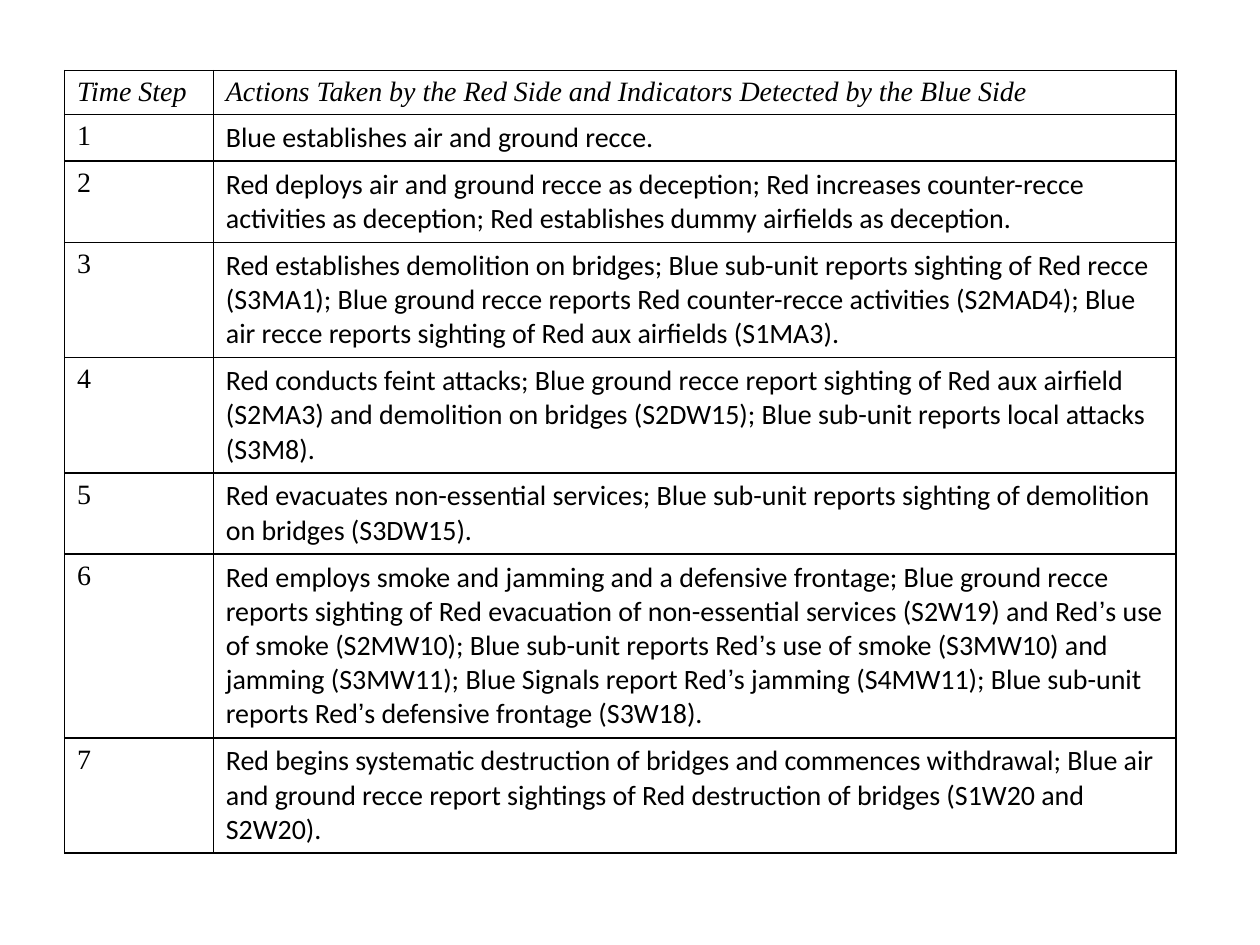
from lxml.etree import SubElement
from pptx import Presentation
from pptx.dml.color import RGBColor
from pptx.oxml.ns import qn
from pptx.util import Pt

BLACK = RGBColor(0x00, 0x00, 0x00)
SERIF, SANS, QUOTE_FONT = "Times New Roman", "Calibri", "Arial"
HEADINGS = (
    "Time Step",
    "Actions Taken by the Red Side and Indicators Detected by the Blue Side",
)
# Each action with the number of lines it takes up
ACTIONS = [
    ("Blue establishes air and ground recce.", 1),
    ("Red deploys air and ground recce as deception; Red increases counter-recce "
     "activities as deception; Red establishes dummy airfields as deception.", 2),
    ("Red establishes demolition on bridges; Blue sub-unit reports sighting of Red "
     "recce (S3MA1); Blue ground recce reports Red counter-recce activities (S2MAD4); "
     "Blue air recce reports sighting of Red aux airfields (S1MA3).", 3),
    ("Red conducts feint attacks; Blue ground recce report sighting of Red aux "
     "airfield (S2MA3) and demolition on bridges (S2DW15); Blue sub-unit reports "
     "local attacks (S3M8).", 3),
    ("Red evacuates non-essential services; Blue sub-unit reports sighting of "
     "demolition on bridges (S3DW15).", 2),
    ("Red employs smoke and jamming and a defensive frontage; Blue ground recce "
     "reports sighting of Red evacuation of non-essential services (S2W19) and "
     "Red’s use of smoke (S2MW10); Blue sub-unit reports Red’s use of smoke (S3MW10) "
     "and jamming (S3MW11); Blue Signals report Red’s jamming (S4MW11); Blue sub-unit "
     "reports Red’s defensive frontage (S3W18).", 5),
    ("Red begins systematic destruction of bridges and commences withdrawal; Blue air "
     "and ground recce report sightings of Red destruction of bridges (S1W20 and "
     "S2W20).", 3),
]
HEADER_HEIGHT, LINE_HEIGHT, CELL_PADDING = 25, 19.5, 7.2


def write(paragraph, text, font=SERIF, size=16, italic=False, color=BLACK):
    run = paragraph.add_run()
    run.text = text
    run.font.name = font
    run.font.size = Pt(size)
    run.font.italic = italic
    run.font.color.rgb = color


def write_action(paragraph, text):
    """Write the text in the sans font, its apostrophes in their own font."""
    first, *others = text.split("’")
    write(paragraph, first, font=SANS)
    for part in others:
        write(paragraph, "’", font=QUOTE_FONT)
        write(paragraph, part, font=SANS)


class SlideBuilder:
    def __init__(self, slide, border_color=BLACK, border_width=1):
        self.slide = slide
        self.border_color = border_color
        self.border_width = border_width

    def table(self, left, top, widths, heights):
        table = self.slide.shapes.add_table(
            len(heights), len(widths), Pt(left), Pt(top),
            Pt(sum(widths)), Pt(sum(heights))).table
        table.first_row = table.horz_banding = False
        for column, width in zip(table.columns, widths):
            column.width = Pt(width)
        for row, height in zip(table.rows, heights):
            row.height = Pt(height)
        for cell in table.iter_cells():
            self.border(cell)
            cell.fill.background()
        return table

    def border(self, cell):
        properties = cell._tc.get_or_add_tcPr()
        for side in ("a:lnL", "a:lnR", "a:lnT", "a:lnB"):
            line = SubElement(properties, qn(side), w=str(Pt(self.border_width)))
            fill = SubElement(line, qn("a:solidFill"))
            SubElement(fill, qn("a:srgbClr"), val=str(self.border_color))


def main():
    deck = Presentation()
    deck.slide_width, deck.slide_height = Pt(720), Pt(540)
    builder = SlideBuilder(deck.slides.add_slide(deck.slide_layouts[6]))

    heights = [HEADER_HEIGHT] + [
        CELL_PADDING + LINE_HEIGHT * lines for _, lines in ACTIONS]
    timeline = builder.table(36.9, 40.3, widths=(85, 550), heights=heights)

    for column, heading in enumerate(HEADINGS):
        write(timeline.cell(0, column).text_frame.paragraphs[0], heading, italic=True)
    for step, (action, _) in enumerate(ACTIONS, start=1):
        write(timeline.cell(step, 0).text_frame.paragraphs[0], str(step))
        write_action(timeline.cell(step, 1).text_frame.paragraphs[0], action)

    deck.save("out.pptx")


if __name__ == "__main__":
    main()
